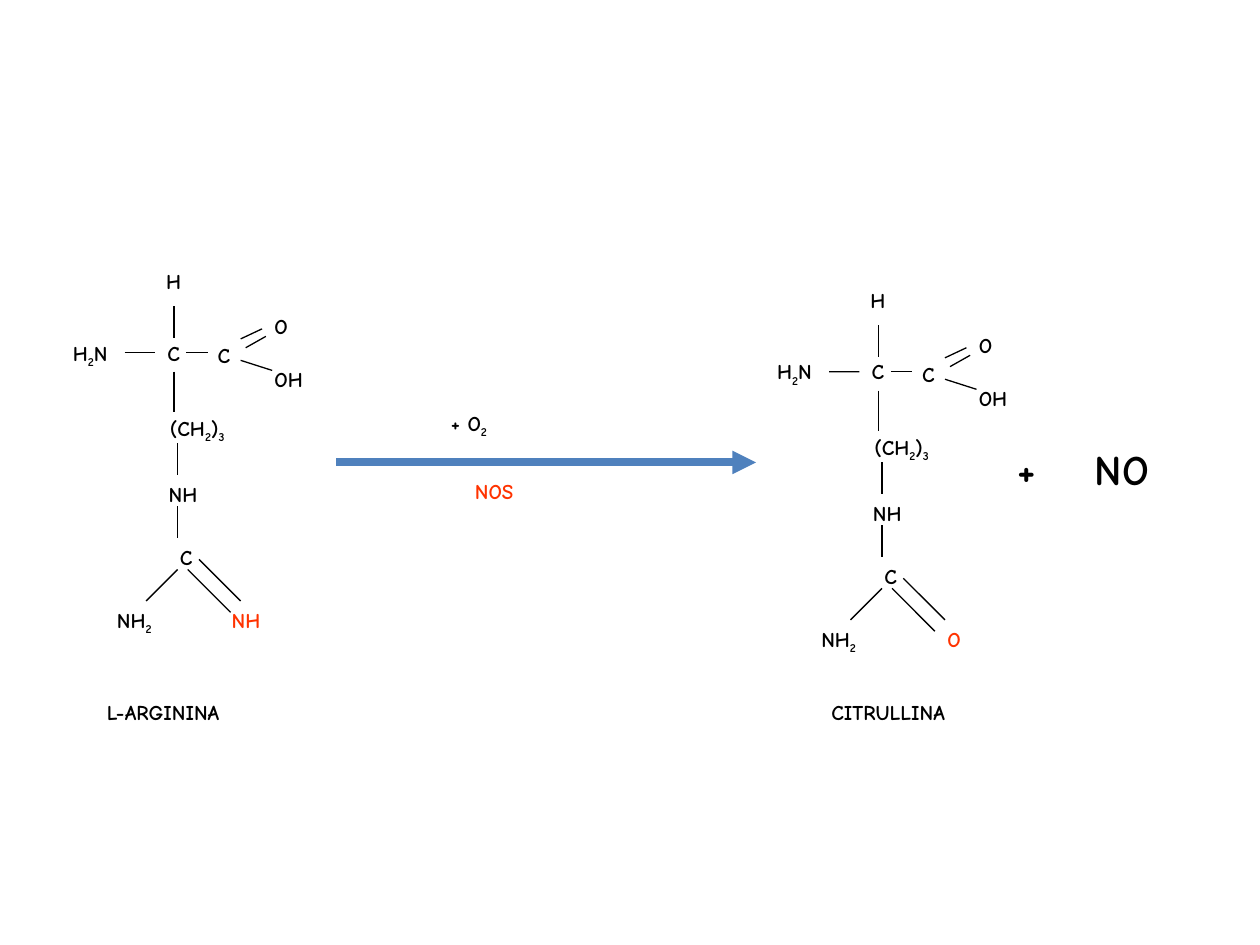
import dataclasses
import itertools

import pptx
import pptx.dml.color
import pptx.enum.shapes
import pptx.enum.text
import pptx.oxml.ns
import pptx.util
from lxml import etree
from pptx.util import Inches


@dataclasses.dataclass(frozen=True)
class Theme:
    font: str = "Comic Neue"
    black: str = "000000"
    red: str = "FF3300"
    blue: str = "4F81BD"
    body_size: float = 12
    product_size: float = 24
    bond_width: float = 0.75
    arrow_width: float = 4.5


class ReactionSlide:
    def __init__(self, slide, theme):
        self.slide = slide
        self.theme = theme
        self.start_group()

    def start_group(self, shift_x=0, shift_y=0):
        self.group = self.slide.shapes.add_group_shape()
        self.shift_x, self.shift_y = shift_x, shift_y

    def place(self, x, y):
        return Inches(x + self.shift_x), Inches(y + self.shift_y)

    def add_text(self, text, left, top, width, height=0.3, color=None, size=None, tab=None):
        box = self.group.shapes.add_textbox(
            *self.place(left, top), Inches(width), Inches(height))
        frame = box.text_frame
        frame.word_wrap = False
        frame.auto_size = pptx.enum.text.MSO_AUTO_SIZE.SHAPE_TO_FIT_TEXT
        paragraph = frame.paragraphs[0]
        if tab:
            properties = paragraph._p.get_or_add_pPr()
            stops = etree.SubElement(properties, pptx.oxml.ns.qn("a:tabLst"))
            etree.SubElement(stops, pptx.oxml.ns.qn("a:tab"), pos=str(Inches(tab)), algn="l")
        for subscript, characters in itertools.groupby(text, str.isdigit):
            run = paragraph.add_run()
            run.text = "".join(characters)
            run.font.name = self.theme.font
            run.font.size = pptx.util.Pt(size or self.theme.body_size)
            run.font.bold = True
            run.font.color.rgb = pptx.dml.color.RGBColor.from_string(color or self.theme.black)
            if subscript:
                run._r.get_or_add_rPr().set("baseline", "-25000")
        return box

    def add_line(self, start, end, color=None, width=None, arrow=False):
        line = self.group.shapes.add_connector(
            pptx.enum.shapes.MSO_CONNECTOR.STRAIGHT, *self.place(*start), *self.place(*end))
        line.line.color.rgb = pptx.dml.color.RGBColor.from_string(color or self.theme.black)
        line.line.width = pptx.util.Pt(width or self.theme.bond_width)
        if arrow:
            etree.SubElement(line.line._get_or_add_ln(),
                             pptx.oxml.ns.qn("a:tailEnd"), type="triangle")
        etree.SubElement(line._element.spPr, pptx.oxml.ns.qn("a:effectLst"))
        return line

    def add_molecule(self, shift_x, shift_y, end_group, end_left, end_width):
        self.start_group(shift_x, shift_y)
        central_carbon = self.add_text("C", 1.23, 2.65, 0.3)
        for atoms in ATOMS:
            self.add_text(*atoms)
        self.add_text(end_group, end_left, 4.77, end_width, color=self.theme.red)
        for start, end in BONDS:
            self.add_line(start, end)
        self.add_line((0.99, 2.8), (1.23, 2.8)).end_connect(central_carbon, 1)
        self.add_line((1.38, 2.95), (1.38, 3.27)).begin_connect(central_carbon, 2)


ATOMS = [
    ("H2N", 0.48, 2.65, 0.53),
    ("C", 1.63, 2.67, 0.3),
    ("(CH2)3", 1.25, 3.25, 0.69),
    ("NH", 1.24, 3.77, 0.46),
    ("C", 1.33, 4.27, 0.3),
    ("NH2", 0.83, 4.77, 0.53),
    ("O", 2.08, 2.44, 0.34),
    ("OH", 2.08, 2.86, 0.46),
    ("H", 1.22, 2.08, 0.33),
]

BONDS = [
    ((1.49, 4.52), (1.83, 4.86)),
    ((1.58, 4.44), (1.91, 4.77)),
    ((1.41, 4.52), (1.16, 4.77)),
    ((1.48, 2.8), (1.65, 2.8)),
    ((1.91, 2.69), (2.08, 2.61)),
    ((1.95, 2.76), (2.11, 2.67)),
    ((1.91, 2.86), (2.16, 2.94)),
    ((1.38, 2.43), (1.38, 2.68)),
    ((1.41, 3.52), (1.41, 3.77)),
    ((1.41, 4.02), (1.41, 4.27)),
]


def main():
    presentation = pptx.Presentation()
    presentation.slide_width = Inches(10)
    presentation.slide_height = Inches(7.5)
    theme = Theme()
    reaction = ReactionSlide(
        presentation.slides.add_slide(presentation.slide_layouts[6]), theme)

    reaction.add_line((2.67, 3.67), (6, 3.67), theme.blue, theme.arrow_width, arrow=True)
    reaction.add_text("+ O2", 3.48, 3.21, 0.58)
    reaction.add_text("NOS", 3.67, 3.75, 0.59, color=theme.red)

    reaction.add_molecule(0, 0, "NH", 1.74, 0.46)
    reaction.add_text("L-ARGININA", 0.75, 5.5, 1.31)

    reaction.add_molecule(5.59, 0.15, "O", 1.83, 0.34)
    reaction.start_group()
    reaction.add_text("CITRULLINA", 6.5, 5.5, 1.27)
    reaction.add_text("+\tNO", 7.98, 3.47, 1.52, 0.5, size=theme.product_size, tab=0.61)

    presentation.save("out.pptx")


if __name__ == "__main__":
    main()
